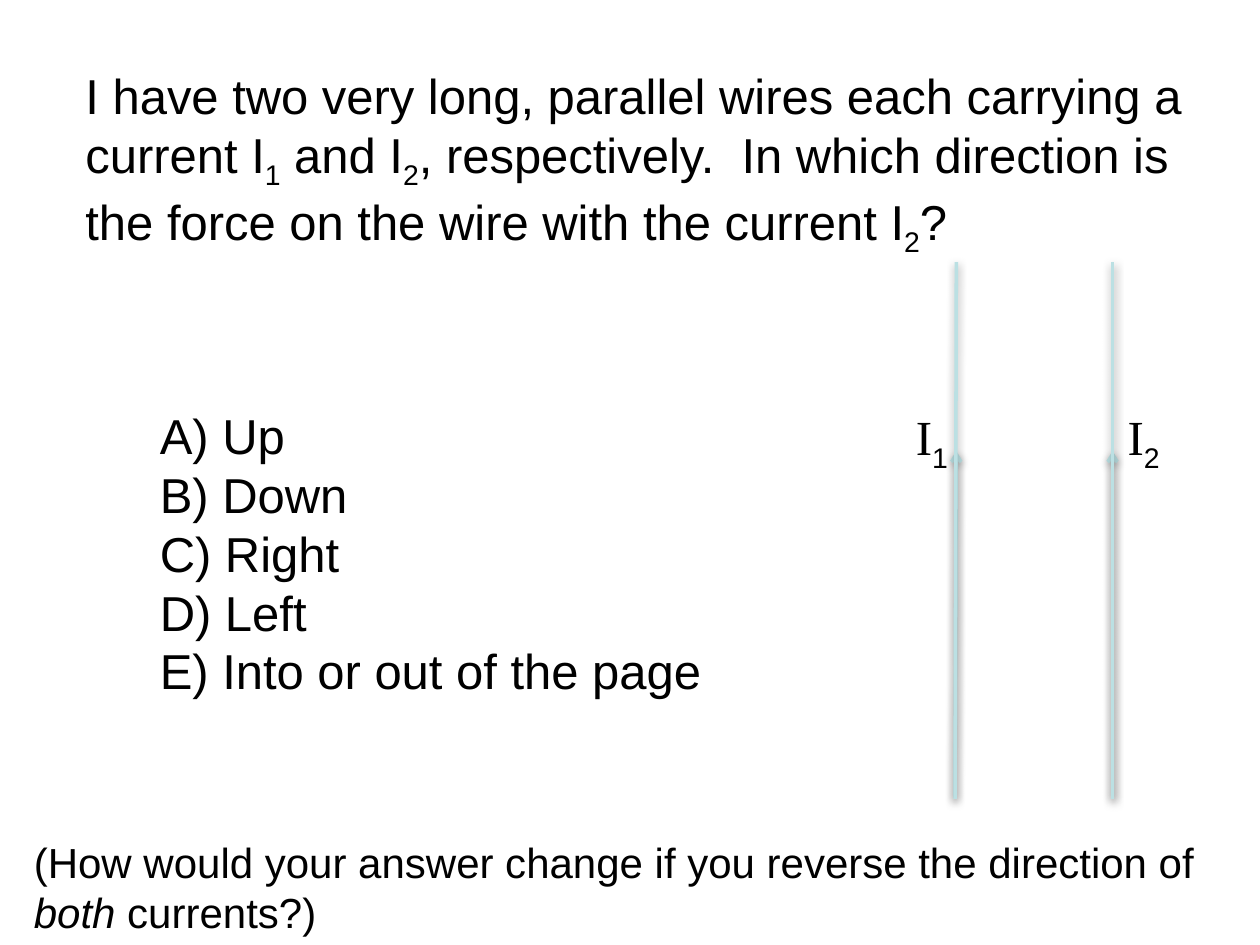
from lxml.etree import SubElement
from pptx import Presentation
from pptx.dml.color import RGBColor
from pptx.enum.shapes import MSO_CONNECTOR
from pptx.enum.text import MSO_AUTO_SIZE
from pptx.oxml.ns import qn
from pptx.util import Inches, Pt

TEXT_COLOR = "000000"
WIRE_COLOR = "BBE0E3"
SUBSCRIPT = {"baseline": -25000}
ITALIC = {"italic": True}


def color(hex_value):
    return RGBColor.from_string(hex_value)


def add_element(parent, tag, **attributes):
    return SubElement(parent, qn(tag), {name: str(value) for name, value in attributes.items()})


def add_run(paragraph, text, size, baseline=None, **formats):
    run = paragraph.add_run()
    run.text = text
    run.font.color.rgb = color(TEXT_COLOR)
    for name, value in {"name": "Arial", "size": Pt(size), **formats}.items():
        setattr(run.font, name, value)
    if baseline:
        run.font._element.set("baseline", str(baseline))


def number_paragraph(paragraph):
    """Give the paragraph a hanging A), B), C) number."""
    properties = paragraph._p.get_or_add_pPr()
    indent = Inches(0.38)
    properties.set("marL", str(indent))
    properties.set("indent", str(-indent))
    add_element(properties, "a:buFont", typeface="Arial")
    add_element(properties, "a:buAutoNum", type="alphaUcParenR")


def add_text(slide, box, paragraphs, size=28, wrap=True, numbered=False):
    """Add a text box; each paragraph is a list of (text, formats) runs."""
    frame = slide.shapes.add_textbox(*map(Inches, box)).text_frame
    frame.word_wrap = wrap
    frame.auto_size = MSO_AUTO_SIZE.SHAPE_TO_FIT_TEXT
    for index, runs in enumerate(paragraphs):
        paragraph = frame.add_paragraph() if index else frame.paragraphs[0]
        if numbered:
            number_paragraph(paragraph)
        for text, formats in runs:
            add_run(paragraph, text, size, **formats)


def add_line(slide, start, end, arrow=False):
    line = slide.shapes.add_connector(MSO_CONNECTOR.STRAIGHT, *map(Inches, start + end))
    line.line.color.rgb = color(WIRE_COLOR)
    line.line.width = Pt(2)
    if arrow:
        add_element(line.line._get_or_add_ln(), "a:tailEnd", type="arrow")
    effects = add_element(line._element.spPr, "a:effectLst")
    shadow = add_element(effects, "a:outerShdw", blurRad=Pt(5), dist=Pt(1.6),
                         dir=90 * 60000, rotWithShape=0)
    shadow_color = add_element(shadow, "a:srgbClr", val="000000")
    add_element(shadow_color, "a:alpha", val=38000)


def add_wire(slide, bottom_x, top_x, label_left, number):
    """Add a long wire, the arrow of its current and the current's label."""
    add_line(slide, (bottom_x, 6.33), (top_x, 3.58), arrow=True)
    add_line(slide, (bottom_x, 6.34), (top_x, 2.08))
    label = [("I", {"name": "Times New Roman"}), (number, SUBSCRIPT)]
    add_text(slide, (label_left, 3.18, 0.48, 0.57), [label], wrap=False)


def main():
    presentation = Presentation()
    presentation.slide_width = Inches(10)
    presentation.slide_height = Inches(7.5)
    slide = presentation.slides.add_slide(presentation.slide_layouts[6])

    add_wire(slide, 7.58, 7.59, 7.17, "1")
    add_wire(slide, 8.83, 8.83, 8.85, "2")

    question = [
        ("I have two very long, parallel wires each carrying a current I", {}),
        ("1", SUBSCRIPT),
        (" and I", {}),
        ("2", SUBSCRIPT),
        (", respectively.  In which direction is the force on the wire with the current I", {}),
        ("2", SUBSCRIPT),
        ("?", {}),
    ]
    add_text(slide, (0.58, 0.47, 9, 1.51), [question])

    follow_up = [
        ("(How would your answer change if you reverse the direction of ", {}),
        ("both ", ITALIC),
        ("currents?)", {}),
    ]
    add_text(slide, (0.17, 6.59, 9.58, 0.91), [follow_up], size=24)

    answers = [" Up", " Down", " Right", " Left", " Into or out of the page"]
    add_text(slide, (1.17, 3.17, 4.55, 2.46), [[(answer, {})] for answer in answers],
             wrap=False, numbered=True)

    presentation.save("out.pptx")


if __name__ == "__main__":
    main()
